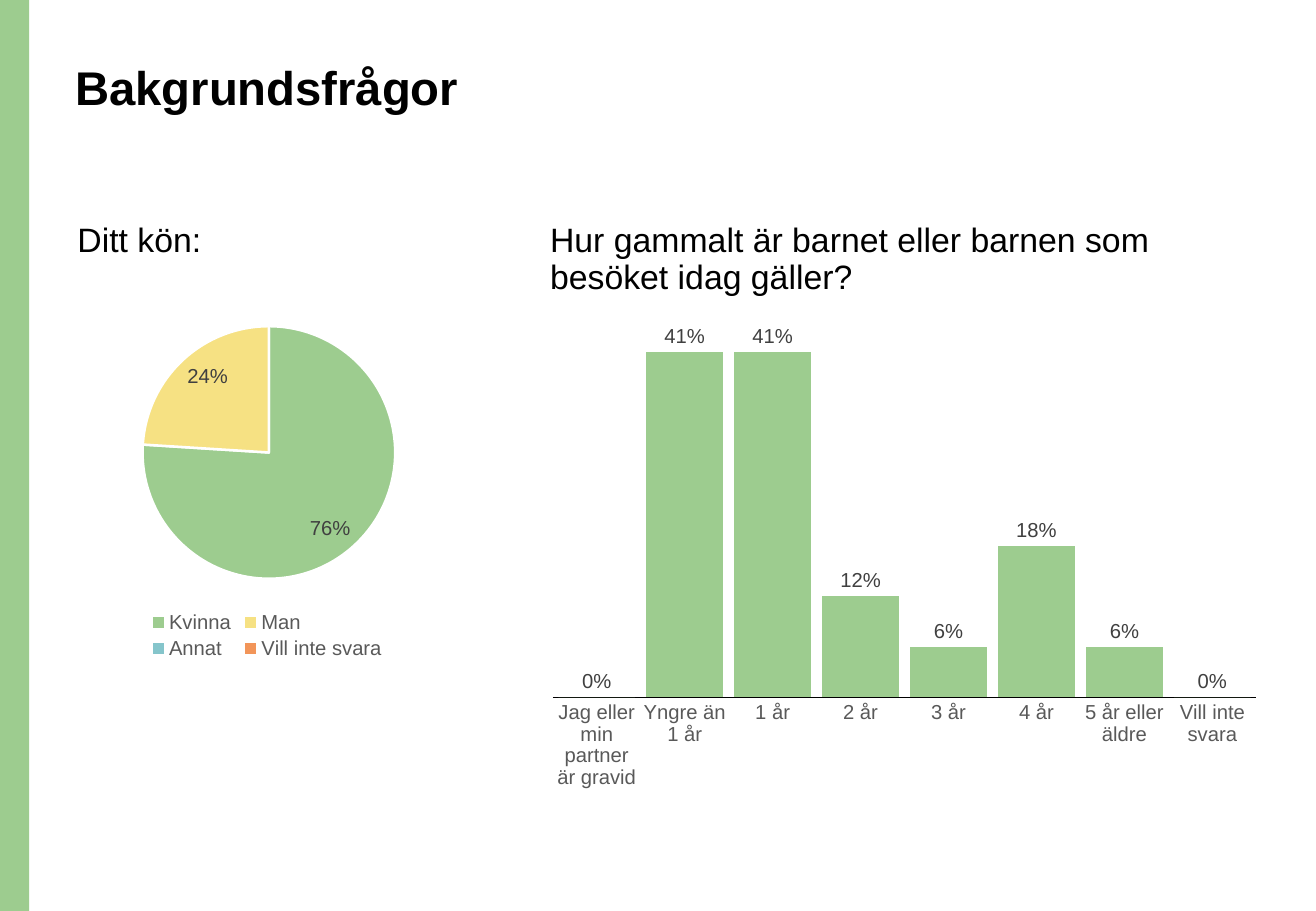
"""Build the background questions slide with a gender pie and an age column chart."""
import pptx
import pptx.chart.data
import pptx.dml.color
import pptx.enum.chart
import pptx.enum.shapes
import pptx.enum.text
import pptx.oxml
import pptx.util

Cm = pptx.util.Cm
Pt = pptx.util.Pt
Kind = pptx.enum.chart.XL_CHART_TYPE
Place = pptx.enum.chart.XL_LABEL_POSITION

theme = {
    "font": "Arial",
    "green": "9DCC8F", "yellow": "F6E183", "blue": "85C5CB", "orange": "F29559",
    "black": "000000", "white": "FFFFFF", "label": "404040", "grey": "595959",
    "title": 28, "head": 20, "small": 12,
}


def style(font, size, color, bold=False):
    font.name = theme["font"]
    font.size = Pt(theme[size])
    font.bold = bold
    font.color.rgb = pptx.dml.color.RGBColor.from_string(theme[color])


def paint(fill, color):
    fill.solid()
    fill.fore_color.rgb = pptx.dml.color.RGBColor.from_string(theme[color])


deck = pptx.Presentation()
deck.slide_width, deck.slide_height = Cm(27.51), Cm(19.05)
slide = deck.slides.add_slide(deck.slide_layouts[5])
shapes = slide.shapes

band = shapes.add_shape(pptx.enum.shapes.MSO_SHAPE.RECTANGLE, 0, 0, Cm(0.61), deck.slide_height)
band.shadow.inherit = False
paint(band.fill, "green")
band.line.fill.background()

title = shapes.title
title.left, title.top, title.width, title.height = Cm(1.32), Cm(1.22), Cm(23.72), Cm(2.59)
gender = shapes.add_textbox(Cm(1.37), Cm(4.55), Cm(11.63), Cm(1.17))
age = shapes.add_textbox(Cm(11.25), Cm(4.55), Cm(15.32), Cm(1.88))

for box, text, size in (
    (title, "Bakgrundsfrågor", "title"),
    (gender, "Ditt kön:", "head"),
    (age, "Hur gammalt är barnet eller barnen som besöket idag gäller?", "head"),
):
    frame = box.text_frame
    frame.word_wrap = True
    frame.auto_size = pptx.enum.text.MSO_AUTO_SIZE.NONE
    frame.vertical_anchor = pptx.enum.text.MSO_ANCHOR.TOP
    para = frame.paragraphs[0]
    para.alignment = pptx.enum.text.PP_ALIGN.LEFT
    para.line_spacing = 0.9
    run = para.add_run()
    run.text = text
    style(run.font, size, "black", size == "title")

charts = []
for kind, left, width, height, values, form, place in (
    (Kind.PIE, 1.35, 8.46, 7.44,
     {"Kvinna": 0.76, "Man": 0.24, "Annat": 0, "Vill inte svara": 0},
     '[<0.01]"";[>0.01]0%', Place.INSIDE_END),
    (Kind.COLUMN_CLUSTERED, 11.25, 15.32, 10.24,
     {"Jag eller min partner är gravid": 0, "Yngre än 1 år": 0.41, "1 år": 0.41,
      "2 år": 0.12, "3 år": 0.06, "4 år": 0.18, "5 år eller äldre": 0.06,
      "Vill inte svara": 0},
     "0%", Place.OUTSIDE_END),
):
    data = pptx.chart.data.CategoryChartData(number_format="0%")
    data.categories = list(values)
    data.add_series("Series 1", list(values.values()))
    chart = shapes.add_chart(kind, Cm(left), Cm(6.45), Cm(width), Cm(height), data).chart
    chart.has_title = False
    chart.has_legend = kind == Kind.PIE
    style(chart.font, "small", "grey")
    plot = chart.plots[0]
    plot.vary_by_categories = kind == Kind.PIE
    plot.has_data_labels = True
    labels = plot.data_labels
    labels.show_value = True
    labels.number_format = form
    labels.number_format_is_linked = False
    labels.position = place
    style(labels.font, "small", "label")
    charts.append(chart)

pie, bars = charts

pie.legend.position = pptx.enum.chart.XL_LEGEND_POSITION.BOTTOM
pie.legend.include_in_layout = False
style(pie.legend.font, "small", "grey")
for index, color in enumerate(("green", "yellow", "blue", "orange")):
    point = pie.plots[0].series[0].points[index]
    paint(point.format.fill, color)
    paint(point.format.line.fill, "white")
    point.format.line.width = Pt(1.5)

area = pie.plots[0]._element.getparent()
for old in area.findall(pptx.oxml.ns.qn("c:layout")):
    area.remove(old)
area.insert(0, pptx.oxml.parse_xml(
    '<c:layout xmlns:c="http://schemas.openxmlformats.org/drawingml/2006/chart">'
    '<c:manualLayout><c:layoutTarget val="inner"/>'
    '<c:xMode val="edge"/><c:yMode val="edge"/>'
    '<c:x val="0.19"/><c:y val="0.05"/><c:w val="0.63"/><c:h val="0.71"/>'
    '</c:manualLayout></c:layout>'))

plot = bars.plots[0]
plot.gap_width = 15
plot.overlap = -27
paint(plot.series[0].format.fill, "green")
scale = bars.value_axis
scale.visible = False
scale.has_major_gridlines = False
scale.minimum_scale, scale.maximum_scale = 0, 0.45
axis = bars.category_axis
axis.major_tick_mark = pptx.enum.chart.XL_TICK_MARK.NONE
axis.minor_tick_mark = pptx.enum.chart.XL_TICK_MARK.NONE
style(axis.tick_labels.font, "small", "grey")
paint(axis.format.line.fill, "black")
axis.format.line.width = Pt(0.75)

deck.save("out.pptx")
